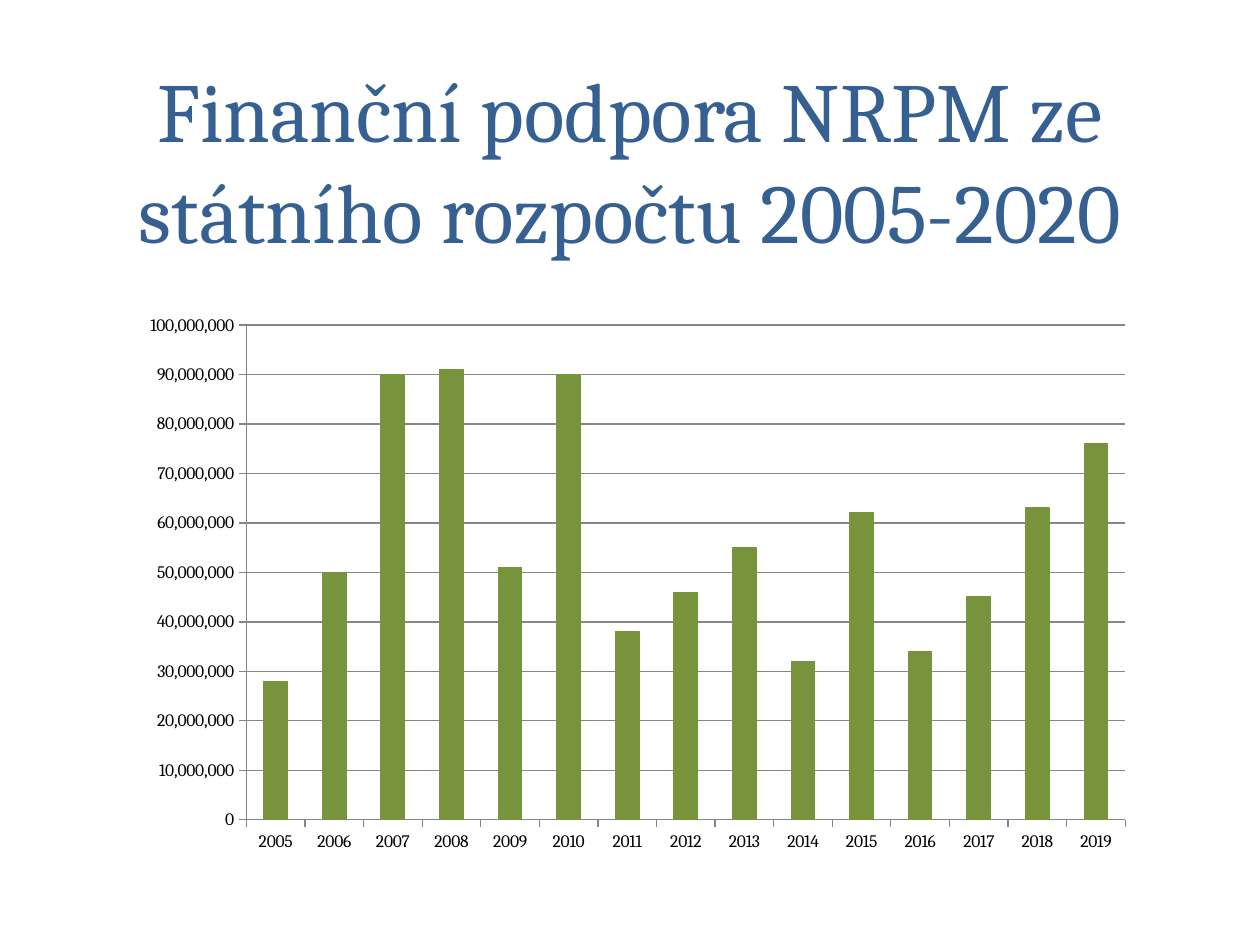
import pptx
import pptx.util
import pptx.chart.data
import pptx.dml.color
import pptx.enum.chart
import pptx.enum.text
import pptx.oxml

PX = pptx.util.Inches(1) / 126
FONT = "Cambria"
BLUE = pptx.dml.color.RGBColor(0x37, 0x60, 0x92)
GREEN = pptx.dml.color.RGBColor(0x77, 0x93, 0x3C)
GREY = pptx.dml.color.RGBColor(0x86, 0x86, 0x86)
BLACK = pptx.dml.color.RGBColor(0, 0, 0)


def px(*lengths):
    return [round(n * PX) for n in lengths]


prs = pptx.Presentation()
prs.slide_width, prs.slide_height = px(1260, 945)
s = prs.slides.add_slide(prs.slide_layouts[6])

# Title
tf = s.shapes.add_textbox(*px(76, 60, 1108, 199)).text_frame
tf.word_wrap = True
tf.vertical_anchor = pptx.enum.text.MSO_ANCHOR.MIDDLE
p = tf.paragraphs[0]
p.alignment = pptx.enum.text.PP_ALIGN.CENTER
r = p.add_run()
r.text = "Finanční podpora NRPM ze státního rozpočtu 2005-2020"
r.font.name = FONT
r.font.size = pptx.util.Pt(48)
r.font.color.rgb = BLUE

# Yearly support, in millions
millions = [28, 50, 90, 91, 51, 90, 38, 46, 55, 32, 62, 34, 45, 63, 76]
data = pptx.chart.data.CategoryChartData(number_format="#,##0")
data.categories = [str(2005 + i) for i in range(len(millions))]
data.add_series("Series 1", [m * 1_000_000 for m in millions])
chart = s.shapes.add_chart(
    pptx.enum.chart.XL_CHART_TYPE.COLUMN_CLUSTERED,
    *px(134, 314, 1022, 556), data).chart
chart.has_legend = False
chart.has_title = False
chart.font.name = FONT
chart.font.size = pptx.util.Pt(10)
chart.font.color.rgb = BLACK

plot = chart.plots[0]
plot.gap_width = 150
plot.vary_by_categories = False
bars = plot.series[0].format
bars.fill.solid()
bars.fill.fore_color.rgb = GREEN
bars.line.color.rgb = GREEN
bars.line.width = pptx.util.Pt(0.75)

values = chart.value_axis
values.minimum_scale = 0
values.maximum_scale = 100_000_000
values.major_unit = 10_000_000
values.has_major_gridlines = True
values.tick_labels.number_format = "#,##0"
values.tick_labels.number_format_is_linked = False
for axis in (chart.category_axis, values):
    axis.major_tick_mark = pptx.enum.chart.XL_TICK_MARK.OUTSIDE
    axis.minor_tick_mark = pptx.enum.chart.XL_TICK_MARK.NONE
for part in (chart.category_axis, values, values.major_gridlines):
    part.format.line.color.rgb = GREY
    part.format.line.width = pptx.util.Pt(0.75)

# Fixed inner plot area, as fractions of the chart
sides = {"x": 0.11, "y": 0.02, "w": 0.86, "h": 0.89}
layout = pptx.oxml.parse_xml(
    '<c:layout xmlns:c="http://schemas.openxmlformats.org/drawingml/2006/chart">'
    '<c:manualLayout><c:layoutTarget val="inner"/>'
    '<c:xMode val="edge"/><c:yMode val="edge"/>'
    + "".join(f'<c:{k} val="{v}"/>' for k, v in sides.items())
    + "</c:manualLayout></c:layout>")
area = chart.element.chart.plotArea
for old in area.findall(layout.tag):
    area.remove(old)
area.insert(0, layout)

prs.save("out.pptx")
